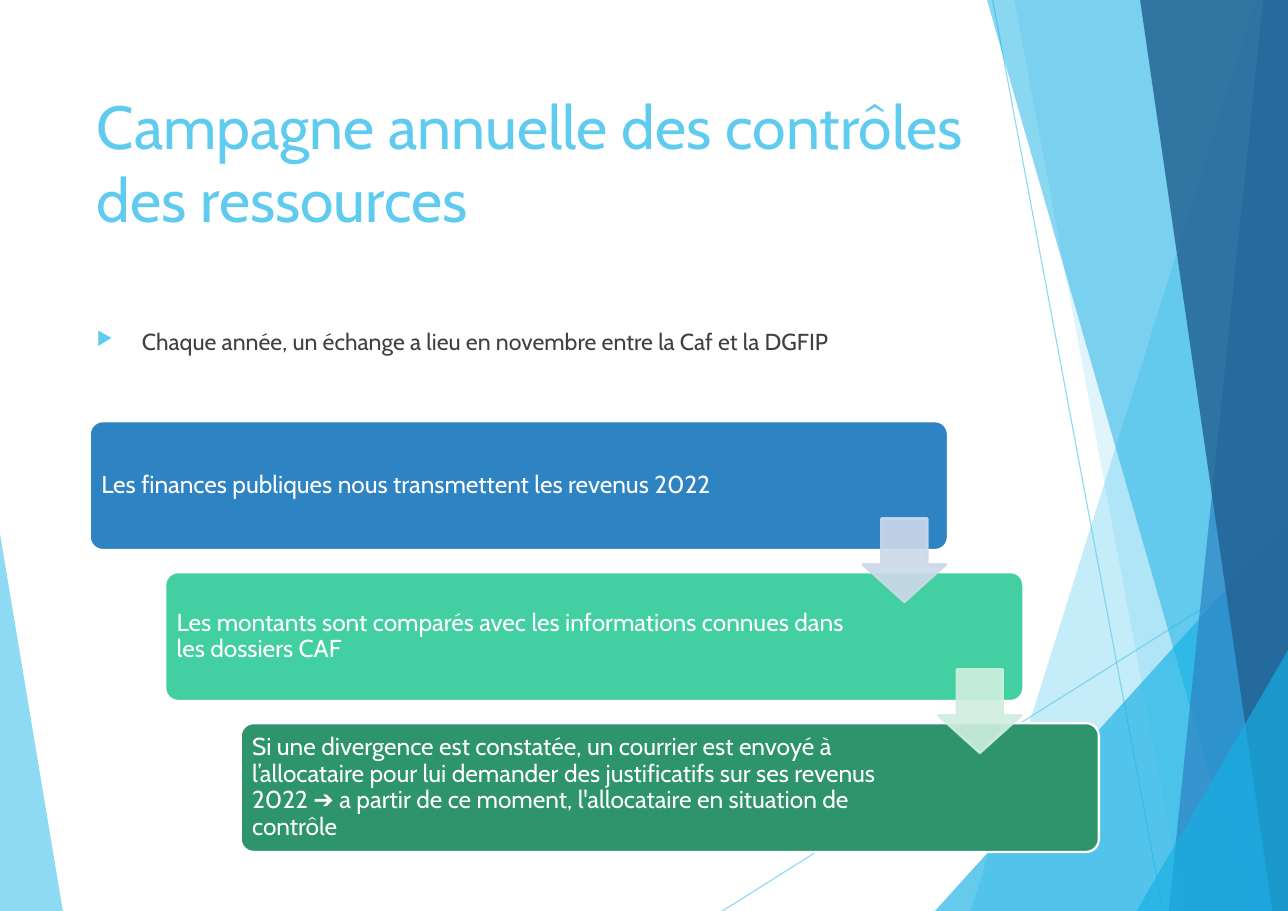
from dataclasses import dataclass

from lxml.etree import SubElement
from pptx import Presentation
from pptx.dml.color import RGBColor as RGB
from pptx.enum.shapes import MSO_CONNECTOR as CONN, MSO_SHAPE as SHAPE
from pptx.enum.text import MSO_ANCHOR as ANCHOR, PP_ALIGN as ALIGN
from pptx.oxml.ns import qn
from pptx.util import Cm, Pt

WIDTH, HEIGHT = 29.7, 21


@dataclass(frozen=True)
class Theme:
    font: str = "Cabin"
    title_size: float = 39.7
    body_size: float = 15.1
    step_size: float = 16
    sky: str = "5FCBEF"
    cyan: str = "17B0E4"
    blue: str = "2E83C3"
    navy: str = "226292"
    mint: str = "42D0A2"
    green: str = "2E946B"
    pale_blue: str = "CDD9E9"
    pale_green: str = "CFEEE0"
    text: str = "404040"
    white: str = "FFFFFF"


class Deck:
    def __init__(self, theme):
        self.theme = theme
        self.prs = Presentation()
        self.prs.slide_width, self.prs.slide_height = Cm(WIDTH), Cm(HEIGHT)
        self.s = self.prs.slides.add_slide(self.prs.slide_layouts[6])

    def paint(self, fill, color, alpha=100):
        fill.solid()
        fill.fore_color.rgb = RGB.from_string(color)
        if alpha < 100:
            clr = fill._xPr.find(".//" + qn("a:srgbClr"))
            SubElement(clr, qn("a:alpha"), val=str(alpha * 1000))

    def facet(self, top, bottom_x, edge, color, alpha):
        x, y = top
        fb = self.s.shapes.build_freeform(Cm(x), Cm(y))
        corners = [(bottom_x, HEIGHT), (edge, HEIGHT), (edge, y)]
        fb.add_line_segments([(Cm(a), Cm(b)) for a, b in corners])
        sp = fb.convert_to_shape()
        sp.shadow.inherit = False
        self.paint(sp.fill, color, alpha)
        sp.line.fill.background()

    def line(self, x1, y1, x2, y2):
        c = self.s.shapes.add_connector(CONN.STRAIGHT, Cm(x1), Cm(y1), Cm(x2), Cm(y2))
        c.line.width = Pt(0.75)
        self.paint(c.line.fill, self.theme.sky, 70)
        SubElement(c._element.spPr, qn("a:effectLst"))

    def shape(self, kind, box, adjustments, fill, outline, alpha=100):
        sp = self.s.shapes.add_shape(kind, *map(Cm, box))
        sp.shadow.inherit = False
        for i, value in enumerate(adjustments):
            sp.adjustments[i] = value
        self.paint(sp.fill, fill, alpha)
        sp.line.width = Pt(1.5)
        self.paint(sp.line.fill, outline, alpha)
        return sp

    def add_text(self, sp, text, size, color, insets, anchor=ANCHOR.TOP):
        tf = sp.text_frame
        tf.word_wrap = True
        tf.vertical_anchor = anchor
        tf.margin_left, tf.margin_top, tf.margin_right, tf.margin_bottom = map(Cm, insets)
        p = tf.paragraphs[0]
        p.alignment = ALIGN.LEFT
        r = p.add_run()
        r.text = text
        r.font.name, r.font.size = self.theme.font, Pt(size)
        r.font.color.rgb = RGB.from_string(color)
        return p

    def text(self, box, text, size, color, inset_top):
        sp = self.s.shapes.add_textbox(*map(Cm, box))
        return self.add_text(sp, text, size, color, (0.25, inset_top, 0.25, 0.13))

    def bullet(self, p, indent):
        pPr = p._p.get_or_add_pPr()
        pPr.set("marL", str(Cm(indent)))
        pPr.set("indent", str(-Cm(indent)))
        clr = SubElement(pPr, qn("a:buClr"))
        SubElement(clr, qn("a:srgbClr"), val=self.theme.sky)
        SubElement(pPr, qn("a:buSzPct"), val="80000")
        SubElement(pPr, qn("a:buChar"), char="▶")

    def step(self, box, text, color, right_inset):
        sp = self.shape(SHAPE.ROUNDED_RECTANGLE, box, [0.1], color, self.theme.white)
        p = self.add_text(sp, text, self.theme.step_size, self.theme.white,
                          (0.18, 0.18, right_inset, 0.18), ANCHOR.MIDDLE)
        p.line_spacing = 0.9

    def arrow(self, box, color):
        self.shape(SHAPE.DOWN_ARROW, box, [0.55, 0.45], color, color, 90)


def main():
    t = Theme()
    deck = Deck(t)

    deck.facet((0, 12.3), 1.45, 0, t.sky, 70)
    deck.line(16.66, HEIGHT, WIDTH, 12.78)
    deck.line(22.89, 0, 26.82, HEIGHT)
    facets = [
        ((28.96, 0), 22.38, t.sky, 36),
        ((23.39, 0), 27.31, t.sky, 20),
        ((WIDTH, 12.01), 21.56, t.cyan, 66),
        ((22.76, 0), 28.8, t.cyan, 50),
        ((29.13, 0), 26.95, t.blue, 70),
        ((26.29, 0), 29.34, t.navy, 82),
        ((WIDTH, 14.99), 26.21, t.cyan, 66),
    ]
    for top, bottom_x, color, alpha in facets:
        deck.facet(top, bottom_x, WIDTH, color, alpha)

    deck.text((1.98, 1.85, 20.62, 4.04), "Campagne annuelle des contrôles des ressources",
              t.title_size, t.sky, 0.2)
    p = deck.text((1.98, 7.42, 20.62, 1.17),
                  "Chaque année, un échange a lieu en novembre entre la Caf et la DGFIP",
                  t.body_size, t.text, 0.13)
    deck.bullet(p, 1.04)

    steps = [
        ("Les finances publiques nous transmettent les revenus 2022", t.blue, 3.24),
        ("Les montants sont comparés avec les informations connues dans les dossiers CAF",
         t.mint, 3.87),
        ("Si une divergence est constatée, un courrier est envoyé à l’allocataire pour lui "
         "demander des justificatifs sur ses revenus 2022 ➔ a partir de ce moment, "
         "l'allocataire en situation de contrôle", t.green, 3.87),
    ]
    dx, dy = 1.74, 3.48
    for i, (text, color, right_inset) in enumerate(steps):
        deck.step((2.07 + i * dx, 9.71 + i * dy, 19.79, 2.97), text, color, right_inset)
    for i, color in enumerate([t.pale_blue, t.pale_green]):
        deck.arrow((19.89 + i * dx, 11.95 + i * dy, 1.93, 1.93), color)

    deck.prs.save("out.pptx")


if __name__ == "__main__":
    main()
